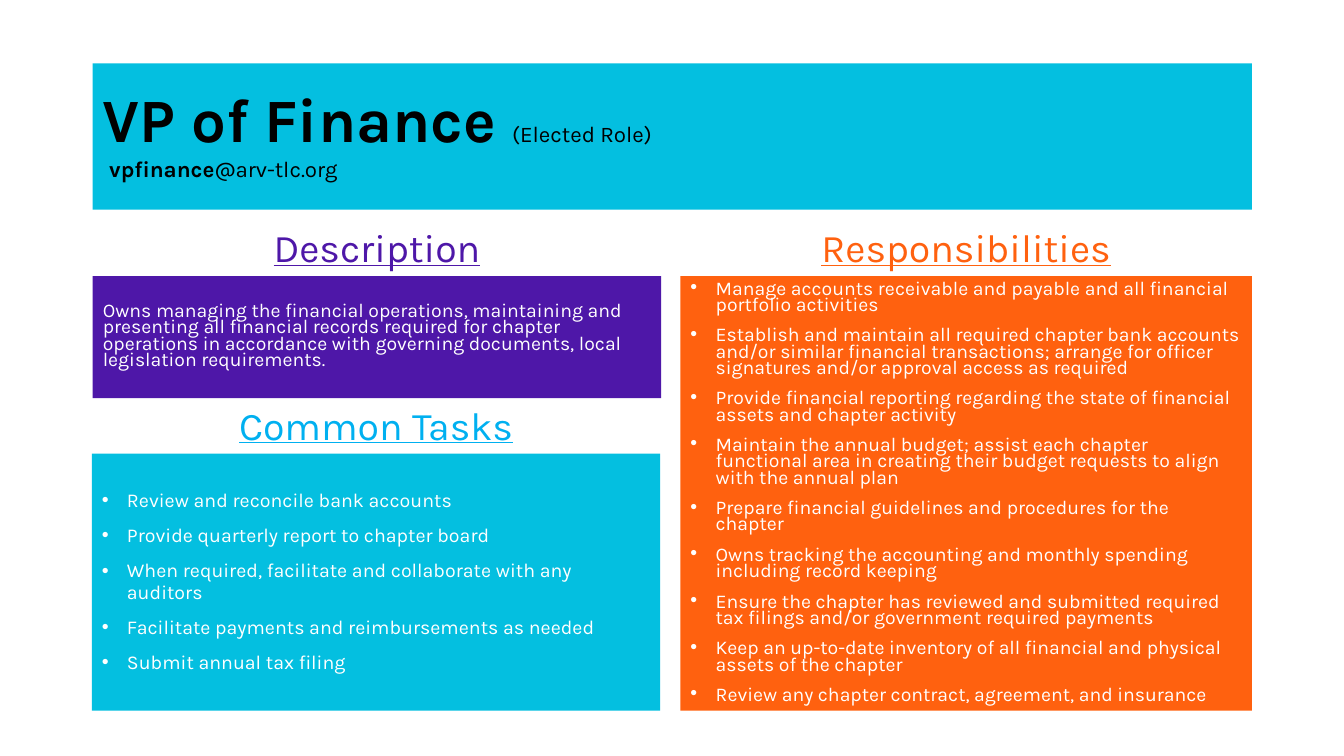
from dataclasses import dataclass

import lxml.etree
import pptx
import pptx.dml.color
import pptx.enum.shapes
import pptx.enum.text
import pptx.oxml.ns
import pptx.util

Pt = pptx.util.Pt
PP_ALIGN = pptx.enum.text.PP_ALIGN
ANCHOR = pptx.enum.text.MSO_ANCHOR

FONT = "Karla"
COLORS = {
    "cyan": "04BFE0",
    "blue": "00B0F0",
    "purple": "4E17A8",
    "orange": "FF610F",
    "white": "FFFFFF",
    "black": "000000",
}
LEFT_X, RIGHT_X = 66.24, 486
TASKS_X = 65.6
LEFT_W, RIGHT_W = 406, 408.2
HEADING_Y, HEADING_H = 132.5, 64.8
PANEL_Y = HEADING_Y + HEADING_H
TASKS_Y = 324
BOTTOM = 507.6
BULLET_INDENT = 18


@dataclass(frozen=True)
class Box:
    x: float
    y: float
    w: float
    h: float


@dataclass(frozen=True)
class Heading:
    text: str
    color: str
    box: Box


@dataclass(frozen=True)
class Panel:
    items: tuple[str, ...]
    fill: str
    box: Box
    size: float
    line_spacing: float
    bulleted: bool = True


@dataclass(frozen=True)
class TitleRun:
    text: str
    size: float
    bold: bool


TITLE_BOX = Box(LEFT_X, 45.36, 828, 104.4)
TITLE_LINES = (
    (TitleRun("VP of Finance ", 44, True), TitleRun("(Elected Role)", 16, False)),
    (
        TitleRun(" ", 18, True),
        TitleRun("vpfinance", 16, True),
        TitleRun("@arv-tlc.org", 16, False),
    ),
)

DESCRIPTION = Heading("Description", "purple", Box(LEFT_X, HEADING_Y, LEFT_W, HEADING_H))
RESPONSIBILITIES = Heading(
    "Responsibilities", "orange", Box(RIGHT_X, HEADING_Y, RIGHT_W, HEADING_H)
)
COMMON_TASKS = Heading("Common Tasks", "blue", Box(TASKS_X, TASKS_Y - 61.2, LEFT_W, 61.2))

DESCRIPTION_PANEL = Panel(
    (
        "Owns managing the financial operations, maintaining and presenting all financial "
        "records required for chapter operations in accordance with governing documents, "
        "local legislation requirements.",
    ),
    "purple", Box(LEFT_X, PANEL_Y, LEFT_W, 87.1), 13.9, 0.7, bulleted=False,
)
RESPONSIBILITIES_PANEL = Panel(
    (
        "Manage accounts receivable and payable and all financial portfolio activities",
        "Establish and maintain all required chapter bank accounts and/or similar financial "
        "transactions; arrange for officer signatures and/or approval access as required",
        "Provide financial reporting regarding the state of financial assets and chapter activity",
        "Maintain the annual budget; assist each chapter functional area in creating their "
        "budget requests to align with the annual plan",
        "Prepare financial guidelines and procedures for the chapter",
        "Owns tracking the accounting and monthly spending including record keeping",
        "Ensure the chapter has reviewed and submitted required tax filings and/or government "
        "required payments",
        "Keep an up-to-date inventory of all financial and physical assets of the chapter",
        "Review any chapter contract, agreement, and insurance",
    ),
    "orange", Box(RIGHT_X, PANEL_Y, RIGHT_W, BOTTOM - PANEL_Y), 13.9, 0.7,
)
TASKS_PANEL = Panel(
    (
        "Review and reconcile bank accounts",
        "Provide quarterly report to chapter board",
        "When required, facilitate and collaborate with any auditors",
        "Facilitate payments and reimbursements as needed",
        "Submit annual tax filing",
    ),
    "cyan", Box(TASKS_X, TASKS_Y, LEFT_W, BOTTOM - TASKS_Y), 14, 0.9,
)


def rgb(name: str) -> pptx.dml.color.RGBColor:
    return pptx.dml.color.RGBColor.from_string(COLORS[name])


def place(sp, box: Box) -> None:
    sp.left, sp.top, sp.width, sp.height = Pt(box.x), Pt(box.y), Pt(box.w), Pt(box.h)


def fill_solid(sp, color: str) -> None:
    sp.fill.solid()
    sp.fill.fore_color.rgb = rgb(color)
    sp.line.fill.background()


def prepare_frame(sp, anchor):
    tf = sp.text_frame
    tf.word_wrap = True
    tf.auto_size = pptx.enum.text.MSO_AUTO_SIZE.NONE
    tf.vertical_anchor = anchor
    return tf


def format_paragraph(p, align, line_spacing: float, before: float, bulleted: bool) -> None:
    """Set alignment and spacing, and override the bullet the template gives."""
    p.alignment = align
    p.line_spacing = line_spacing
    p.space_before = Pt(before)
    p.space_after = Pt(0)
    pPr = p._p.get_or_add_pPr()
    indent = Pt(BULLET_INDENT) if bulleted else 0
    pPr.set("marL", str(indent))
    pPr.set("indent", str(-indent))
    qn = pptx.oxml.ns.qn
    if bulleted:
        lxml.etree.SubElement(pPr, qn("a:buFont"), typeface="Arial")
        lxml.etree.SubElement(pPr, qn("a:buChar"), char="•")
    else:
        lxml.etree.SubElement(pPr, qn("a:buNone"))


def add_run(p, text: str, size: float, color: str, bold: bool = False, underline: bool = False):
    r = p.add_run()
    r.text = text
    r.font.name = FONT
    r.font.size = Pt(size)
    r.font.bold = bold
    r.font.underline = underline
    r.font.color.rgb = rgb(color)


def draw_title(sp) -> None:
    place(sp, TITLE_BOX)
    fill_solid(sp, "cyan")
    p = prepare_frame(sp, ANCHOR.MIDDLE).paragraphs[0]
    format_paragraph(p, PP_ALIGN.LEFT, 0.9, 0, False)
    for i, line in enumerate(TITLE_LINES):
        if i:
            p.add_line_break()
        for run in line:
            add_run(p, run.text, run.size, "black", run.bold)


def draw_heading(sp, heading: Heading) -> None:
    place(sp, heading.box)
    p = prepare_frame(sp, ANCHOR.BOTTOM).paragraphs[0]
    format_paragraph(p, PP_ALIGN.CENTER, 0.9, 10, False)
    add_run(p, heading.text, 28, heading.color, underline=True)


def draw_panel(sp, panel: Panel) -> None:
    place(sp, panel.box)
    fill_solid(sp, panel.fill)
    tf = prepare_frame(sp, ANCHOR.MIDDLE)
    for i, item in enumerate(panel.items):
        p = tf.add_paragraph() if i else tf.paragraphs[0]
        format_paragraph(p, PP_ALIGN.LEFT, panel.line_spacing, 10, panel.bulleted)
        add_run(p, item, panel.size, "white")


def main() -> None:
    prs = pptx.Presentation()
    prs.slide_width, prs.slide_height = Pt(960), Pt(540)
    s = prs.slides.add_slide(prs.slide_layouts.get_by_name("Comparison"))

    title, left_head, left_body, right_head, right_body = s.placeholders
    draw_title(title)
    draw_heading(left_head, DESCRIPTION)
    draw_panel(left_body, DESCRIPTION_PANEL)
    draw_heading(right_head, RESPONSIBILITIES)
    draw_panel(right_body, RESPONSIBILITIES_PANEL)

    tasks = s.shapes.add_shape(pptx.enum.shapes.MSO_SHAPE.RECTANGLE, 0, 0, 0, 0)
    tasks.shadow.inherit = False
    draw_panel(tasks, TASKS_PANEL)
    draw_heading(s.shapes.add_textbox(0, 0, 0, 0), COMMON_TASKS)

    prs.save("out.pptx")


if __name__ == "__main__":
    main()
